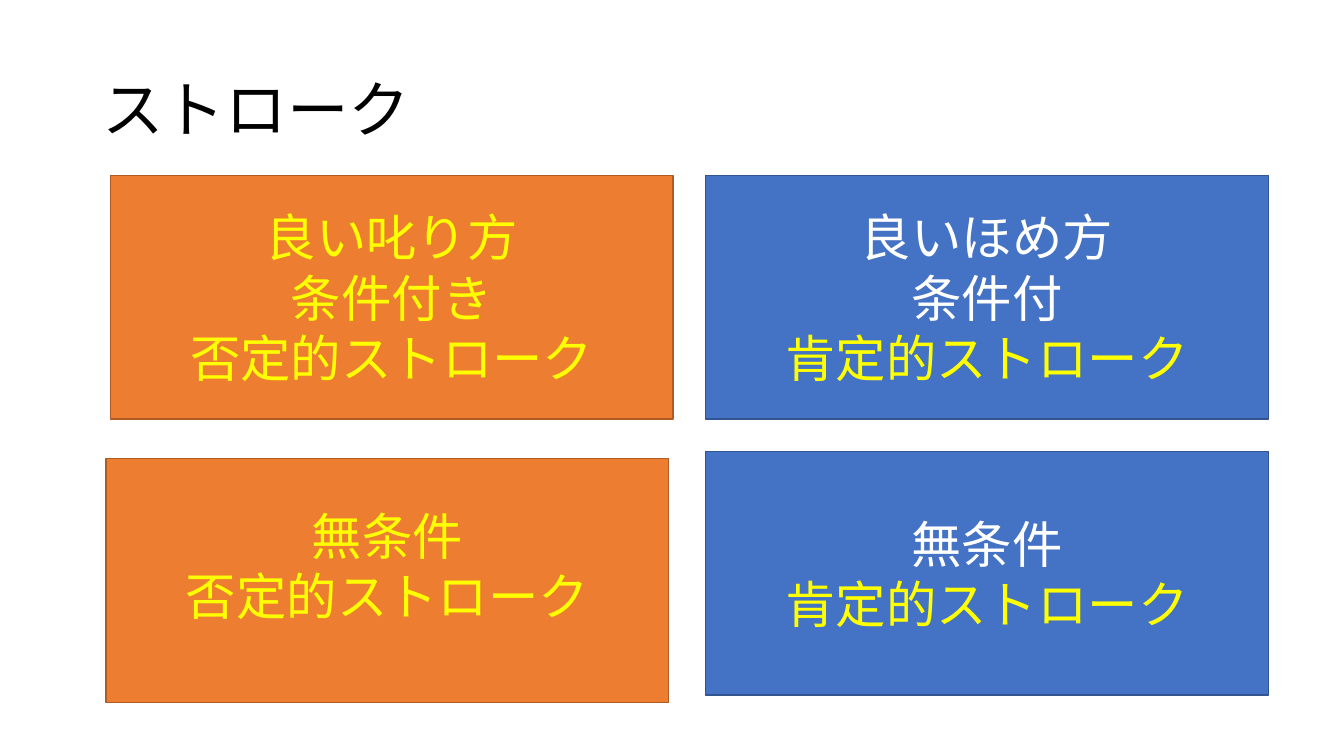
from dataclasses import dataclass

from lxml import etree
from pptx import Presentation
from pptx.dml.color import RGBColor
from pptx.enum.shapes import MSO_SHAPE
from pptx.enum.text import MSO_ANCHOR, PP_ALIGN
from pptx.oxml.ns import qn
from pptx.util import Emu, Pt

RECTANGLE = MSO_SHAPE.RECTANGLE
MIDDLE = MSO_ANCHOR.MIDDLE
LEFT = PP_ALIGN.LEFT
CENTER = PP_ALIGN.CENTER
EMU_PER_PX = 9525
SLIDE_SIZE = (1280, 720)
BLANK_LAYOUT = 6


@dataclass(frozen=True)
class Theme:
    font: str = "Noto Sans CJK JP"
    title_size: int = 44
    box_size: int = 36
    black: str = "000000"
    white: str = "FFFFFF"
    yellow: str = "FFFF00"
    orange: str = "ED7D31"
    orange_line: str = "AF5C24"
    blue: str = "4472C4"
    blue_line: str = "325491"


def px(length):
    return Emu(length * EMU_PER_PX)


def add_text(paragraph, text, *, font, size, color, align=LEFT, spacing=None):
    paragraph.alignment = align
    if spacing:
        paragraph.line_spacing = spacing
    run = paragraph.add_run()
    run.text = text
    run.font.size = Pt(size)
    run.font.color.rgb = RGBColor.from_string(color)
    run.font.name = font
    east_asian = etree.SubElement(run.font._element, qn("a:ea"))
    east_asian.set("typeface", font)


class SlideBuilder:
    """Draw titles and stroke boxes on one slide in a shared theme."""

    def __init__(self, slide, theme):
        self.slide = slide
        self.theme = theme

    def title(self, text, left, top, width, height):
        shape = self.slide.shapes.add_textbox(*map(px, (left, top, width, height)))
        frame = shape.text_frame
        frame.word_wrap = True
        frame.vertical_anchor = MIDDLE
        add_text(frame.paragraphs[0], text, font=self.theme.font,
                 size=self.theme.title_size, color=self.theme.black, spacing=0.9)

    def box(self, lines, left, top, fill, outline, bottom_inset=5):
        shape = self.slide.shapes.add_shape(
            RECTANGLE, px(left), px(top), px(536), px(232))
        shape.shadow.inherit = False
        shape.fill.solid()
        shape.fill.fore_color.rgb = RGBColor.from_string(fill)
        shape.line.color.rgb = RGBColor.from_string(outline)
        shape.line.width = Pt(1)
        frame = shape.text_frame
        frame.word_wrap = True
        frame.vertical_anchor = MIDDLE
        frame.margin_bottom = px(bottom_inset)
        for index, (text, color) in enumerate(lines):
            paragraph = frame.add_paragraph() if index else frame.paragraphs[0]
            add_text(paragraph, text, font=self.theme.font,
                     size=self.theme.box_size, color=color, align=CENTER)


def main():
    presentation = Presentation()
    presentation.slide_width, presentation.slide_height = map(px, SLIDE_SIZE)
    slide = presentation.slides.add_slide(presentation.slide_layouts[BLANK_LAYOUT])
    theme = Theme()
    builder = SlideBuilder(slide, theme)
    negative = ("否定的ストローク", theme.yellow)
    positive = ("肯定的ストローク", theme.yellow)
    orange = (theme.orange, theme.orange_line)
    blue = (theme.blue, theme.blue_line)

    builder.title("ストローク", 88, 38, 1104, 139)
    builder.box([("良い叱り方", theme.yellow), ("条件付き", theme.yellow), negative],
                105, 167, *orange)
    builder.box([("無条件", theme.yellow), negative],
                101, 437, *orange, bottom_inset=34)
    builder.box([("良いほめ方", theme.white), ("条件付", theme.white), positive],
                672, 167, *blue)
    builder.box([("無条件", theme.white), positive], 672, 430, *blue)
    presentation.save("out.pptx")


if __name__ == "__main__":
    main()
